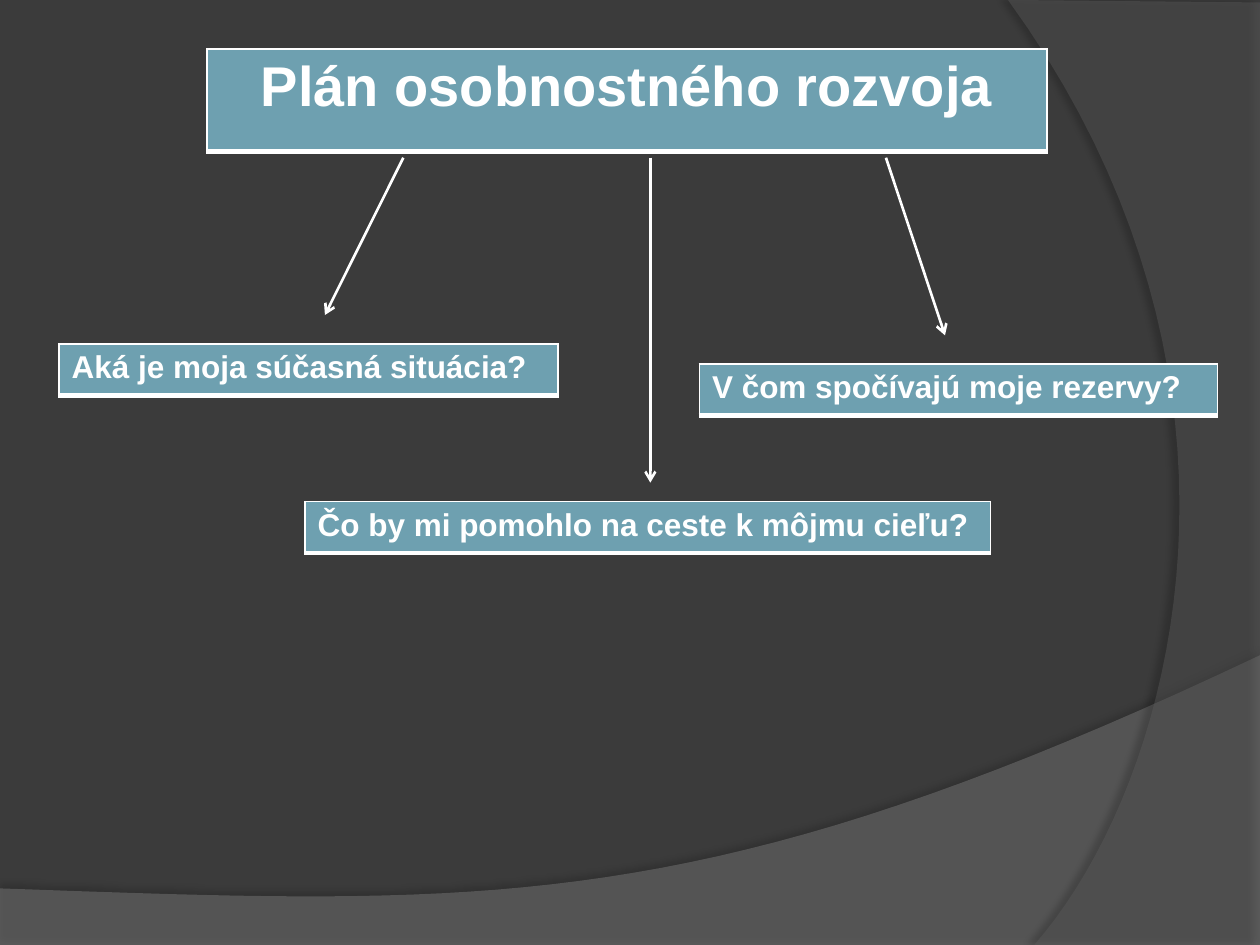
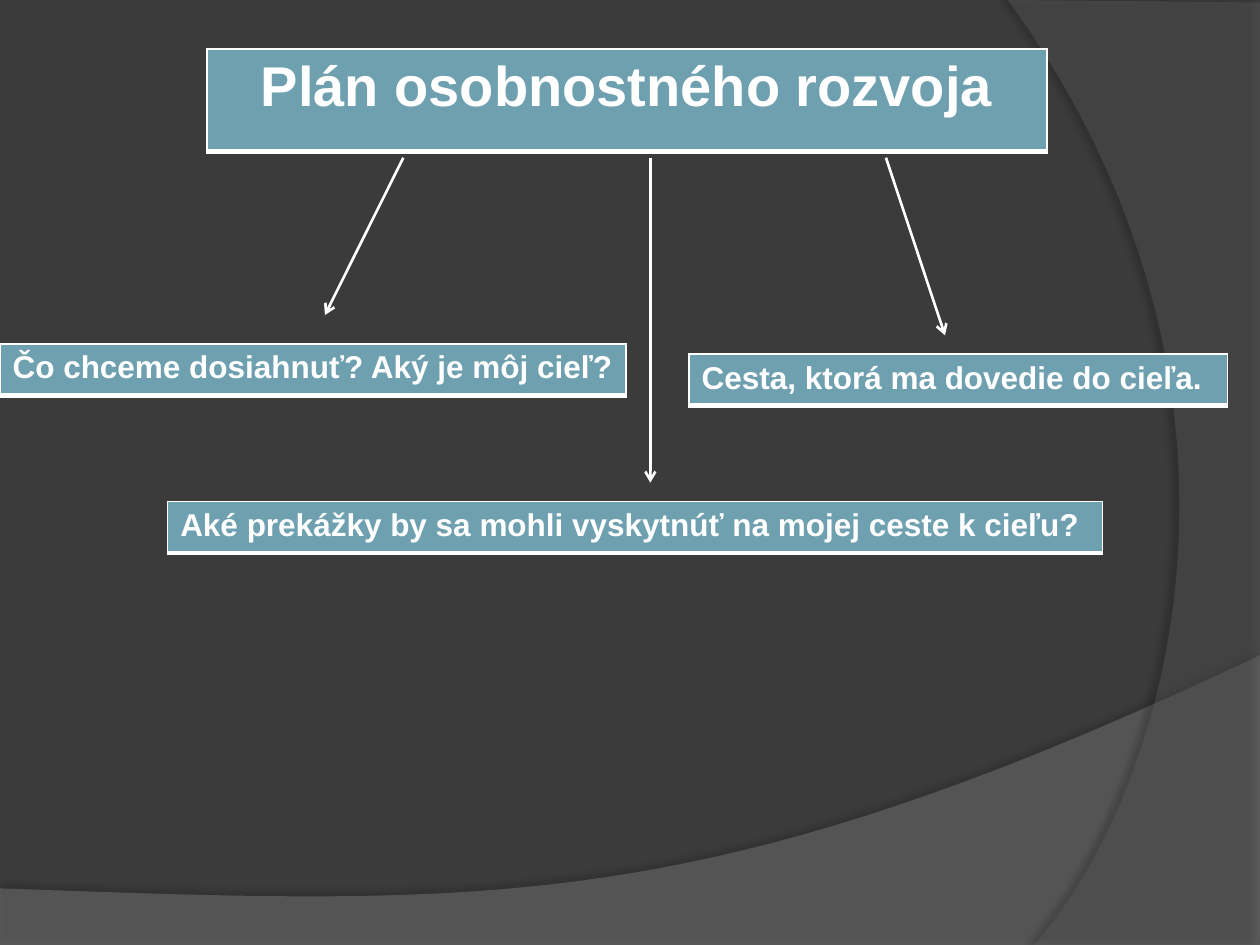
from pptx import Presentation
from pptx.dml.color import RGBColor
from pptx.enum.shapes import MSO_CONNECTOR as Connector
from pptx.enum.text import PP_ALIGN as Align
from pptx.oxml import parse_xml
from pptx.oxml.ns import nsdecls
from pptx.util import Cm, Pt

COLORS = {"background": "3B3B3B", "panel": "6EA0B0", "white": "FFFFFF",
          "lower wave": "7F7F7F", "right wave": "5E5E5E", "shadow": "000000"}
FONT = "Arial"

# All places are in centimetres: left, top, width, height.
TITLE = ("Plán osobnostného rozvoja", (4.17, 0.99, 16.94, 2.06))
PANEL_HEIGHT = 1.04
PAGES = [
    [("Aká je moja súčasná situácia?", (1.19, 6.93, 10.06)),
     ("V čom spočívajú moje rezervy?", (14.1, 7.34, 10.44)),
     ("Čo by mi pomohlo na ceste k môjmu cieľu?", (6.15, 10.11, 13.82))],
    [("Čo chceme dosiahnuť? Aký je môj cieľ?", (0, 6.93, 12.62)),
     ("Cesta, ktorá ma dovedie do cieľa.", (13.89, 7.14, 10.85)),
     ("Aké prekážky by sa mohli vyskytnúť na mojej ceste k cieľu?",
      (3.38, 10.11, 18.85))],
]
ARROW_TOP = 3.18
ARROWS = [(8.13, 6.55, 6.35), (13.11, 13.11, 9.73), (17.86, 19.05, 6.76)]  # from x, to x, to y

# Each wave has straight corners, then one Bézier curve from the last corner.
WAVES = [
    {"color": "lower wave", "opacity": 45,
     "corners": [(0, 17.91), (0, 19.08), (25.4, 19.08), (25.4, 13.21)],
     "curve": [(14.2, 18.52), (9.93, 18.26), (0, 17.91)],
     "shadow": {"opacity": 35, "blur": 4, "distance": 3.5, "angle": 270}},
    {"color": "right wave", "opacity": 40,
     "corners": [(25.4, 0.05), (25.4, 19.05), (20.85, 19.05)],
     "curve": [(23.75, 15.72), (25.86, 7.62), (20.32, 0)],
     "shadow": {"opacity": 45, "blur": 4, "distance": 4, "angle": 180}},
]
CURVE_STEPS = 40
BORDERS = {"lnL": 1, "lnR": 1, "lnT": 1, "lnB": 3}
TITLE_FORMAT = {"size": Pt(32), "bold": True, "name": FONT}
PANEL_FORMAT = {"size": Pt(18), "bold": True, "name": FONT}


def color(name):
    return RGBColor.from_string(COLORS[name])


def element(tag, attributes="", content=""):
    return parse_xml(f'<a:{tag} {nsdecls("a")} {attributes}>{content}</a:{tag}>')


def paint(fill, name):
    fill.solid()
    fill.fore_color.rgb = color(name)


def bezier(points):
    """Points along a cubic curve, without its start."""
    for step in range(1, CURVE_STEPS + 1):
        t = step / CURVE_STEPS
        weights = ((1 - t) ** 3, 3 * t * (1 - t) ** 2, 3 * t ** 2 * (1 - t), t ** 3)
        yield tuple(sum(w * p[axis] for w, p in zip(weights, points)) for axis in (0, 1))


def add_wave(page, wave):
    corners = wave["corners"]
    outline = corners + list(bezier(corners[-1:] + wave["curve"]))
    (start_x, start_y), *rest = [(Cm(x), Cm(y)) for x, y in outline]
    builder = page.shapes.build_freeform(start_x, start_y)
    builder.add_line_segments(rest, close=True)
    shape = builder.convert_to_shape()
    shape.line.fill.background()
    paint(shape.fill, wave["color"])
    properties = shape.element.spPr
    properties.find(".//{*}solidFill/{*}srgbClr").append(
        element("alpha", f'val="{wave["opacity"] * 1000}"'))
    shadow = wave["shadow"]
    properties.append(element("effectLst", content=(
        f'<a:outerShdw blurRad="{Pt(shadow["blur"])}" dist="{Pt(shadow["distance"])}" '
        f'dir="{shadow["angle"] * 60000}" algn="ctr" rotWithShape="0">'
        f'<a:srgbClr val="{COLORS["shadow"]}"><a:alpha val="{shadow["opacity"] * 1000}"/>'
        '</a:srgbClr></a:outerShdw>')))
    return shape


def add_panel(page, text, place, font_format, align=Align.LEFT):
    """A one-cell table with a heavier lower border."""
    frame = page.shapes.add_table(1, 1, *map(Cm, place))
    table = frame.table
    table.first_row = table.horz_banding = False
    cell = table.cell(0, 0)
    properties = cell._tc.get_or_add_tcPr()
    for side, width in BORDERS.items():
        properties.append(element(side, f'w="{Pt(width)}"', (
            f'<a:solidFill><a:srgbClr val="{COLORS["white"]}"/></a:solidFill>')))
    paint(cell.fill, "panel")
    para = cell.text_frame.paragraphs[0]
    para.alignment = align
    span = para.add_run()
    span.text = text
    for key, value in font_format.items():
        setattr(span.font, key, value)
    span.font.color.rgb = color("white")


def add_arrow(page, from_x, to_x, to_y):
    arrow = page.shapes.add_connector(
        Connector.STRAIGHT, Cm(from_x), Cm(ARROW_TOP), Cm(to_x), Cm(to_y))
    arrow.line.color.rgb = color("white")
    arrow.line.width = Pt(1.5)
    arrow.line._get_or_add_ln().append(element("tailEnd", 'type="arrow"'))
    arrow._element.spPr.append(element("effectLst"))


def main():
    deck = Presentation()
    deck.slide_width, deck.slide_height = Cm(25.4), Cm(19.05)
    paint(deck.slide_master.background.fill, "background")
    layout = deck.slide_layouts.get_by_name("Blank")
    pages = [deck.slides.add_slide(layout) for _ in PAGES]

    # The waves are drawn on a page, then moved to the layout all pages share.
    for wave in WAVES:
        layout.shapes.element.append(add_wave(pages[0], wave).element)

    for page, panels in zip(pages, PAGES):
        add_panel(page, *TITLE, TITLE_FORMAT, Align.CENTER)
        for arrow in ARROWS:
            add_arrow(page, *arrow)
        for text, place in panels:
            add_panel(page, text, (*place, PANEL_HEIGHT), PANEL_FORMAT)
    deck.save("out.pptx")


if __name__ == "__main__":
    main()
